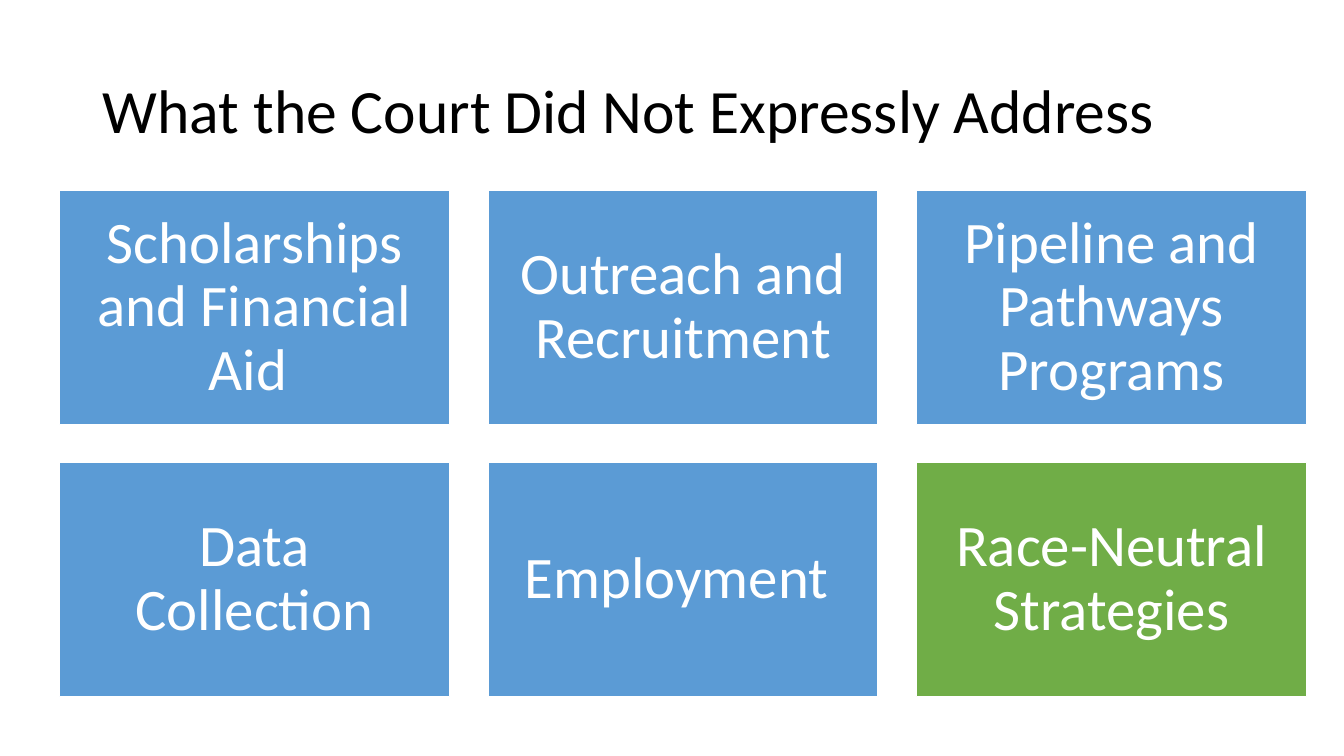
from pptx import Presentation
from pptx.dml.color import RGBColor
from pptx.enum.shapes import MSO_SHAPE
from pptx.enum.text import MSO_ANCHOR, MSO_AUTO_SIZE, PP_ALIGN
from pptx.util import Emu, Pt

RECTANGLE = MSO_SHAPE.RECTANGLE
MIDDLE = MSO_ANCHOR.MIDDLE
NO_AUTOFIT = MSO_AUTO_SIZE.NONE
LEFT, CENTER = PP_ALIGN.LEFT, PP_ALIGN.CENTER

EMU_PER_PX = 9144  # 100 px to the inch
TITLE_ONLY = 5
FONT = "Calibri"
BLUE, GREEN, WHITE, BLACK = "5B9BD5", "70AD47", "FFFFFF", "000000"

# Card grid
COLUMNS = 3
GRID_LEFT, GRID_TOP = 59, 189
CARD_WIDTH, CARD_HEIGHT = 387, 232
GAP = 38
CARD_INSET = 17

TOPICS = [
    ("Scholarships and Financial Aid ", BLUE),
    ("Outreach and Recruitment", BLUE),
    ("Pipeline and Pathways Programs", BLUE),
    ("Data Collection", BLUE),
    ("Employment ", BLUE),
    ("Race-Neutral Strategies", GREEN),
]


def px(length):
    return Emu(length * EMU_PER_PX)


def color(value):
    return RGBColor.from_string(value)


def write_text(shape, text, *, size, fill, align, inset=None):
    frame = shape.text_frame
    frame.word_wrap = True
    frame.auto_size = NO_AUTOFIT
    frame.vertical_anchor = MIDDLE
    if inset is not None:
        frame.margin_left = frame.margin_right = px(inset)
        frame.margin_top = frame.margin_bottom = px(inset)
    para = frame.paragraphs[0]
    para.alignment = align
    para.line_spacing = 0.9
    span = para.add_run()
    span.text = text
    span.font.name = FONT
    span.font.size = Pt(size)
    span.font.color.rgb = color(fill)


def add_title(page, text):
    title = page.shapes.title
    title.left, title.top = px(92), px(40)
    title.width, title.height = px(1150), px(145)
    write_text(title, text, size=44, fill=BLACK, align=LEFT)


def add_card(page, left, top, text, fill):
    card = page.shapes.add_shape(
        RECTANGLE, px(left), px(top), px(CARD_WIDTH), px(CARD_HEIGHT))
    card.shadow.inherit = False
    card.fill.solid()
    card.fill.fore_color.rgb = color(fill)
    card.line.color.rgb = color(WHITE)
    card.line.width = Pt(1)
    write_text(card, text, size=42, fill=WHITE, align=CENTER, inset=CARD_INSET)


def main():
    deck = Presentation()
    deck.slide_width, deck.slide_height = px(1333), px(750)
    page = deck.slides.add_slide(deck.slide_layouts[TITLE_ONLY])

    add_title(page, "What the Court Did Not Expressly Address")

    # Topics fill the grid row by row
    for index, (topic, fill) in enumerate(TOPICS):
        row, column = divmod(index, COLUMNS)
        left = GRID_LEFT + column * (CARD_WIDTH + GAP)
        top = GRID_TOP + row * (CARD_HEIGHT + GAP)
        add_card(page, left, top, topic, fill)

    deck.save("out.pptx")


if __name__ == "__main__":
    main()
